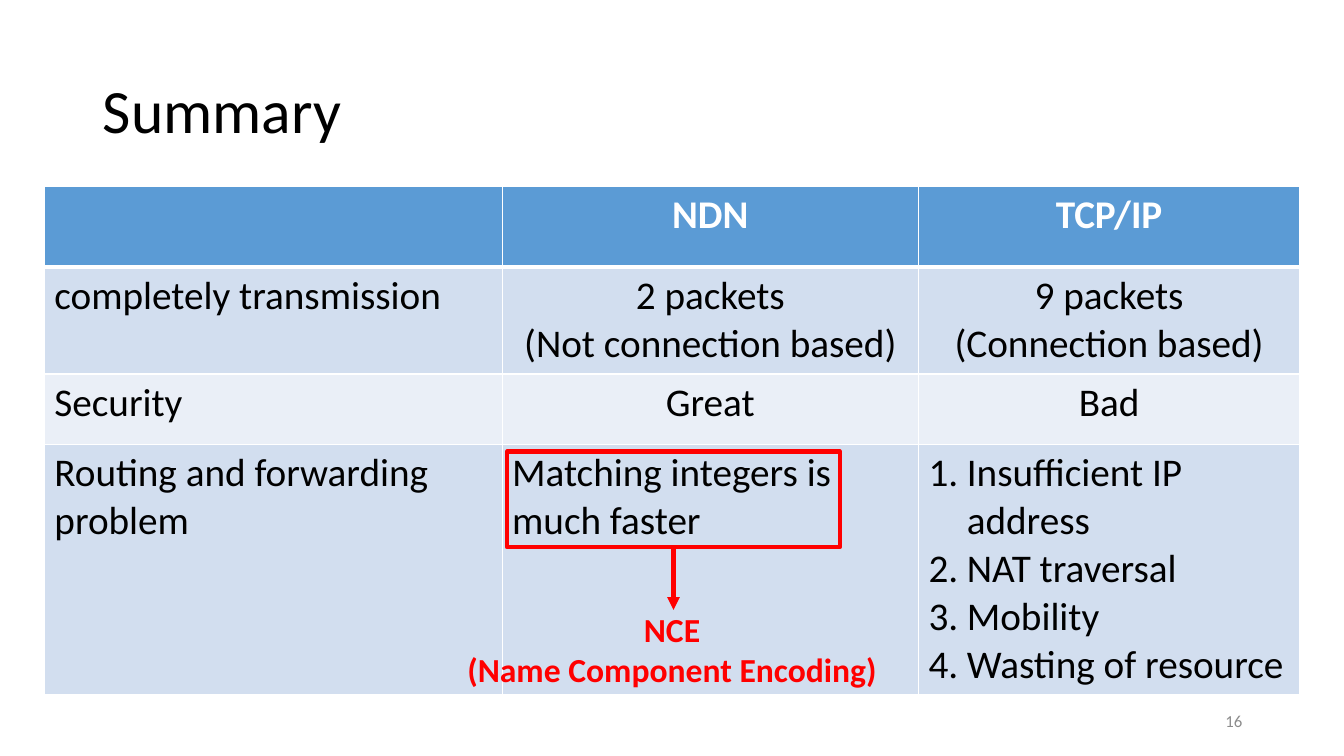
import pptx
import pptx.util
import pptx.dml.color
import pptx.enum.shapes
import pptx.enum.text
import pptx.oxml
import pptx.oxml.ns
import lxml.etree
import dataclasses

Inches = pptx.util.Inches
Pt = pptx.util.Pt
Align = pptx.enum.text.PP_ALIGN
Anchor = pptx.enum.text.MSO_ANCHOR


@dataclasses.dataclass(frozen=True)
class Theme:
    font: str = "Calibri"
    ink: str = "000000"
    white: str = "FFFFFF"
    head: str = "5B9BD5"
    band: str = "D2DEEF"
    pale: str = "EAEFF7"
    mark: str = "FF0000"
    gray: str = "8C8C8C"
    title: int = 44
    cell: int = 28
    note: int = 24
    page: int = 12
    stroke: int = 3


def tint(code):
    return pptx.dml.color.RGBColor.from_string(code)


def apply(item, values):
    for name, value in values.items():
        setattr(item, name, value)


def add_node(parent, tag, **values):
    return lxml.etree.SubElement(parent, pptx.oxml.ns.qn(tag), values)


class Deck:
    def __init__(self, theme):
        self.theme = theme
        self.file = pptx.Presentation()
        apply(self.file, {"slide_width": Inches(13.33), "slide_height": Inches(7.5)})
        self.slide = self.file.slides.add_slide(self.file.slide_layouts[5])
        self.shapes = self.slide.shapes

    def put(self, frame, text, size, color, bold=False, align=Align.LEFT, space=None):
        frame.text = text
        for para in frame.paragraphs:
            apply(para, {"alignment": align, "line_spacing": space})
            for run in para.runs:
                apply(run.font, {"name": self.theme.font, "size": Pt(size), "bold": bold})
                run.font.color.rgb = tint(color)

    def title(self, text, box):
        shape = self.slide.shapes.title
        apply(shape, dict(zip(("left", "top", "width", "height"), map(Inches, box))))
        apply(shape.text_frame, {"word_wrap": True, "vertical_anchor": Anchor.MIDDLE})
        self.put(shape.text_frame, text, self.theme.title, self.theme.ink, space=0.9)

    def text(self, text, box, size, color, anchor=Anchor.TOP, **style):
        frame = self.shapes.add_textbox(*map(Inches, box)).text_frame
        apply(frame, {"word_wrap": True, "vertical_anchor": anchor})
        self.put(frame, text, size, color, **style)

    def edge(self, cell, side, width):
        line = add_node(cell._tc.get_or_add_tcPr(), "a:" + side, w=str(Pt(width)))
        add_node(add_node(line, "a:solidFill"), "a:srgbClr", val=self.theme.white)

    def number(self, frame):
        for para in frame.paragraphs:
            props = para._p.get_or_add_pPr()
            props.set("marL", str(Inches(0.38)))
            props.set("indent", str(-Inches(0.38)))
            add_node(props, "a:buFont", typeface="+mj-lt")
            add_node(props, "a:buAutoNum", type="arabicPeriod")

    def table(self, rows, left, top, widths, heights):
        look = self.theme
        fills = (look.head, look.band, look.pale, look.band)
        box = map(Inches, (left, top, sum(widths), sum(heights)))
        grid = self.shapes.add_table(len(rows), len(widths), *box).table
        apply(grid, {"first_row": False, "horz_banding": False})
        for col, width in zip(grid.columns, widths):
            col.width = Inches(width)
        for row, height in zip(grid.rows, heights):
            row.height = Inches(height)
        for r, row in enumerate(rows):
            edges = {"lnL": 1, "lnR": 1, "lnT": 3 if r == 1 else 1, "lnB": 3 if r == 0 else 1}
            ink = look.ink if r else look.white
            for c, (text, align) in enumerate(row):
                cell = grid.cell(r, c)
                for side, width in edges.items():
                    self.edge(cell, side, width)
                cell.fill.solid()
                cell.fill.fore_color.rgb = tint(fills[r])
                self.put(cell.text_frame, text, look.cell, ink, bold=r == 0, align=align)
        return grid

    def stroke(self, line):
        line.color.rgb = tint(self.theme.mark)
        line.width = Pt(self.theme.stroke)

    def frame(self, box):
        kind = pptx.enum.shapes.MSO_SHAPE.RECTANGLE
        shape = self.shapes.add_shape(kind, *map(Inches, box))
        shape.shadow.inherit = False
        shape.fill.background()
        self.stroke(shape.line)
        return shape

    def arrow(self, start, end, source):
        kind = pptx.enum.shapes.MSO_CONNECTOR.STRAIGHT
        link = self.shapes.add_connector(kind, *map(Inches, start + end))
        link.begin_connect(source, 2)
        self.stroke(link.line)
        add_node(link.line._get_or_add_ln(), "a:tailEnd", type="triangle")
        add_node(link._element.spPr, "a:effectLst")

    def group(self):
        self.shapes = self.slide.shapes.add_group_shape().shapes


def main():
    look = Theme()
    deck = Deck(look)
    left, mid = Align.LEFT, Align.CENTER
    deck.title("Summary", (0.92, 0.4, 11.5, 1.45))
    rows = [
        [("", left), ("NDN", mid), ("TCP/IP", mid)],
        [("completely transmission", left), ("2 packets\n(Not connection based)", mid),
         ("9 packets\n(Connection based)", mid)],
        [("Security", left), ("Great", mid), ("Bad", mid)],
        [("Routing and forwarding problem", left), ("Matching integers is much faster", left),
         ("Insufficient IP address\nNAT traversal\nMobility\nWasting of resource", left)],
    ]
    grid = deck.table(rows, 0.44, 1.85, (4.54, 4.13, 3.78), (0.8, 1.06, 0.7, 2.44))
    deck.number(grid.cell(3, 2).text_frame)
    deck.text("16", (9.42, 6.95, 3, 0.4), look.page, look.gray, Anchor.MIDDLE, align=Align.RIGHT)
    deck.group()
    box = deck.frame((5.03, 4.48, 3.3, 0.95))
    deck.arrow((6.68, 5.43), (6.68, 6.05), box)
    deck.text("NCE\n(Name Component Encoding)", (4.09, 5.99, 5.15, 0.91), look.note, look.mark,
              bold=True, align=mid)
    deck.file.save("out.pptx")


if __name__ == "__main__":
    main()
